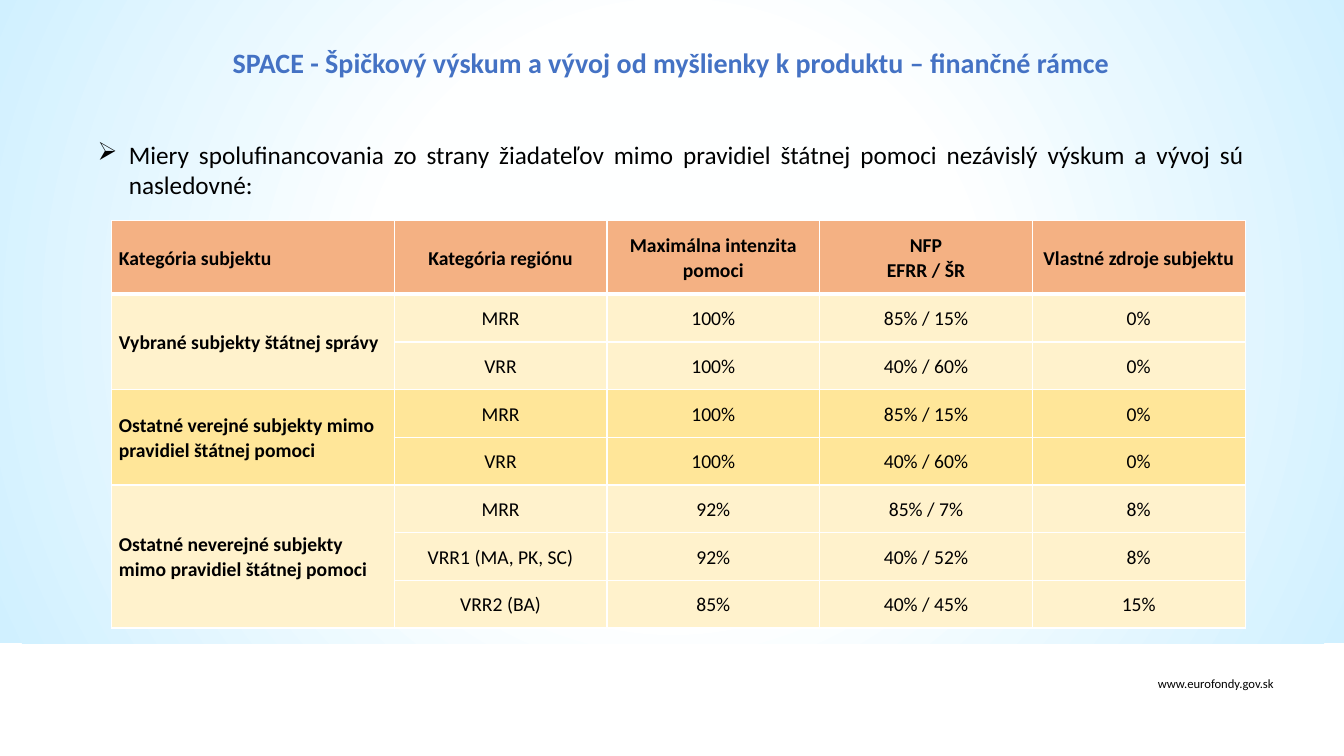
import pptx
import pptx.dml.color
import pptx.enum.shapes
import pptx.enum.text
import pptx.oxml
import pptx.oxml.ns
import pptx.util
from pptx.util import Inches

FONT = "Calibri"
ALIGN = pptx.enum.text.PP_ALIGN
HEADER_FILL, LIGHT_FILL, STRONG_FILL = "F4B183", "FFF2CC", "FFE699"
HEADINGS = ["Kategória subjektu", "Kategória regiónu", "Maximálna intenzita pomoci",
            "NFP\nEFRR / ŠR", "Vlastné zdroje subjektu"]
GROUPS = [
    ("Vybrané subjekty štátnej správy", LIGHT_FILL, [
        ("MRR", "100%", "85% / 15%", "0%"),
        ("VRR", "100%", "40% / 60%", "0%")]),
    ("Ostatné verejné subjekty mimo pravidiel štátnej pomoci", STRONG_FILL, [
        ("MRR", "100%", "85% / 15%", "0%"),
        ("VRR", "100%", "40% / 60%", "0%")]),
    ("Ostatné neverejné subjekty mimo pravidiel štátnej pomoci", LIGHT_FILL, [
        ("MRR", "92%", "85% / 7%", "8%"),
        ("VRR1 (MA, PK, SC)", "92%", "40% / 52%", "8%"),
        ("VRR2 (BA)", "85%", "40% / 45%", "15%")]),
]


def color(hex_text):
    return pptx.dml.color.RGBColor.from_string(hex_text)


def parse(xml):
    """Parse one DrawingML element, given without its namespace declaration."""
    name, rest = xml[1:].split(" ", 1)
    return pptx.oxml.parse_xml(f"<{name} {pptx.oxml.ns.nsdecls('a')} {rest}")


def write(paragraph, text, size, hex_text="000000", bold=False, align=ALIGN.LEFT):
    """Add text to a paragraph, with a line break at each newline."""
    paragraph.alignment = align
    for index, line in enumerate(text.split("\n")):
        if index:
            paragraph.add_line_break()
        run = paragraph.add_run()
        run.text = line
        run.font.name = FONT
        run.font.size = pptx.util.Pt(size)
        run.font.bold = bold
        run.font.color.rgb = color(hex_text)


def add_text(slide, left, top, width, height):
    """Add a wrapping text box and return its first paragraph."""
    box = slide.shapes.add_textbox(Inches(left), Inches(top), Inches(width), Inches(height))
    box.text_frame.word_wrap = True
    return box.text_frame.paragraphs[0]


def add_background(slide):
    panel = slide.shapes.add_shape(pptx.enum.shapes.MSO_SHAPE.RECTANGLE,
                                   0, Inches(-0.1), Inches(13.35), Inches(6.48))
    panel.shadow.inherit = False
    panel.line.fill.background()
    panel.fill.gradient()
    gradient = panel._element.spPr.find(pptx.oxml.ns.qn("a:gradFill"))
    stops = "".join(f'<a:gs pos="{percent * 1000}"><a:srgbClr val="{hex_text}"/></a:gs>'
                    for percent, hex_text in [(0, "FEFFFF"), (40, "FEFFFF"), (100, "D0F0FF")])
    gradient.getparent().replace(gradient, parse(
        f'<a:gradFill rotWithShape="1"><a:gsLst>{stops}</a:gsLst><a:path path="circle">'
        '<a:fillToRect l="50000" t="50000" r="50000" b="50000"/></a:path></a:gradFill>'))


def add_bullet(paragraph, character, indent):
    properties = paragraph._p.get_or_add_pPr()
    properties.set("marL", str(Inches(indent)))
    properties.set("indent", str(-Inches(indent)))
    properties.append(parse(f'<a:buChar char="{character}"/>'))


def set_borders(cell, top, bottom):
    """Draw white borders; top and bottom are widths in points."""
    properties = cell._tc.get_or_add_tcPr()
    for side, points in [("L", 1), ("R", 1), ("T", top), ("B", bottom)]:
        properties.append(parse(
            f'<a:ln{side} w="{pptx.util.Pt(points)}"><a:solidFill>'
            f'<a:srgbClr val="FFFFFF"/></a:solidFill></a:ln{side}>'))


def fill_cell(table, row, column, text, fill, bold=False):
    cell = table.cell(row, column)
    set_borders(cell, top=3 if row == 1 else 1, bottom=3 if row == 0 else 1)
    cell.fill.solid()
    cell.fill.fore_color.rgb = color(fill)
    cell.vertical_anchor = pptx.enum.text.MSO_ANCHOR.MIDDLE
    cell.margin_left = cell.margin_right = Inches(0.07)
    cell.margin_top = cell.margin_bottom = 0
    if text:
        paragraph = cell.text_frame.paragraphs[0]
        paragraph.line_spacing = 1.07
        paragraph.space_before = paragraph.space_after = pptx.util.Pt(2)
        write(paragraph, text, 14, bold=bold, align=ALIGN.CENTER if column else ALIGN.LEFT)


def add_rates_table(slide):
    row_count = 1 + sum(len(rates) for _, _, rates in GROUPS)
    table = slide.shapes.add_table(row_count, len(HEADINGS), Inches(1.11), Inches(2.19),
                                   Inches(11.23), Inches(4.04)).table
    table.first_row = table.horz_banding = False
    for index, column in enumerate(table.columns):
        column.width = Inches(2.11 if index else 2.8)
    for index, row in enumerate(table.rows):
        row.height = Inches(0.473 if index else 0.73)
    for column, heading in enumerate(HEADINGS):
        fill_cell(table, 0, column, heading, HEADER_FILL, bold=True)
    first = 1
    for subject, fill, rates in GROUPS:
        for offset, values in enumerate(rates):
            fill_cell(table, first + offset, 0, "" if offset else subject, fill, bold=True)
            for column, value in enumerate(values, 1):
                fill_cell(table, first + offset, column, value, fill)
        last = first + len(rates) - 1
        table.cell(first, 0).merge(table.cell(last, 0))
        first = last + 1


def main():
    presentation = pptx.Presentation()
    presentation.slide_width = Inches(13.33)
    presentation.slide_height = Inches(7.5)
    slide = presentation.slides.add_slide(presentation.slide_layouts[6])
    add_background(slide)
    write(add_text(slide, 0.87, 0.4, 11.57, 0.44),
          "SPACE - Špičkový výskum a vývoj od myšlienky k produktu – finančné rámce",
          20, "4472C4", bold=True, align=ALIGN.CENTER)
    introduction = add_text(slide, 0.87, 1.33, 11.57, 0.71)
    add_bullet(introduction, "➢", 0.31)
    write(introduction, "Miery spolufinancovania zo strany žiadateľov mimo pravidiel štátnej "
          "pomoci nezávislý výskum a vývoj sú nasledovné:", 18, align=ALIGN.JUSTIFY)
    add_rates_table(slide)
    write(add_text(slide, 10.73, 6.66, 2, 0.25), "www.eurofondy.gov.sk", 9, align=ALIGN.RIGHT)
    presentation.save("out.pptx")


if __name__ == "__main__":
    main()
